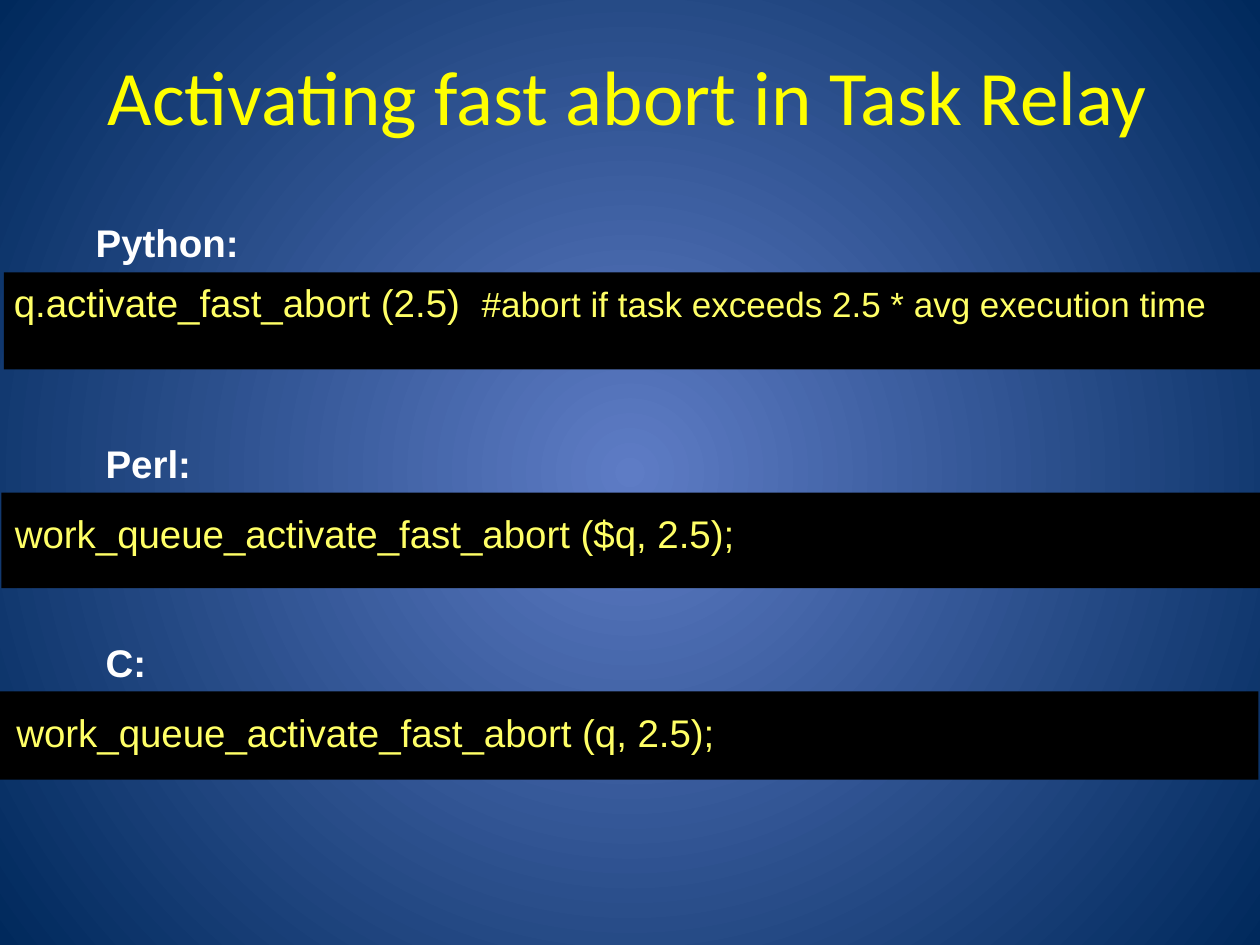
"""Build a slide on activating fast abort from Python, Perl and C."""
from dataclasses import dataclass

from lxml import etree
from pptx import Presentation
from pptx import util as u
from pptx.dml.color import RGBColor
from pptx.enum import shapes, text
from pptx.oxml.ns import qn
from pptx.slide import Slide
from pptx.text.text import TextFrame

COLORS = {
    "center": "5E7CC5",
    "edge": "00295C",
    "title": "FFFF00",
    "label": "FFFFFF",
    "code": "FFFF66",
    "outline": "FFFF00",
    "bar": "000000",
}


@dataclass(frozen=True)
class Box:
    """Position and size in centimetres."""

    left: float
    top: float
    width: float
    height: float

    def lengths(self) -> tuple[u.Cm, ...]:
        """Return the four values as lengths."""
        return tuple(u.Cm(v) for v in (self.left, self.top, self.width, self.height))


@dataclass(frozen=True)
class Run:
    """A stretch of text with one format."""

    words: str
    size: float
    color: str
    font: str = "Arial"
    bold: bool = False
    outlined: bool = False


@dataclass(frozen=True)
class Example:
    """A language label with its code on a dark bar."""

    label: Run
    label_left: float
    bar: Box
    code: tuple[Run, ...]
    code_box: Box


def label(words: str) -> Run:
    """Return a language label."""
    return Run(words, 22, "label", bold=True)


def code(words: str, size: float = 22) -> Run:
    """Return a stretch of code."""
    return Run(words, size, "code", outlined=True)


EXAMPLES = (
    Example(
        label("Python:"), 1.68, Box(0.08, 5.49, 25.4, 1.96),
        (
            code("q.activate_fast_abort (2.5)  "),
            code("#abort if task exceeds 2.5 * avg execution time", 20),
        ),
        Box(0.03, 5.51, 25.2, 1.96),
    ),
    Example(
        label("Perl:"), 1.88, Box(0.03, 9.93, 25.4, 1.93),
        (code("work_queue_activate_fast_abort ($q, 2.5);"),),
        Box(0.05, 10.16, 25.2, 1.96),
    ),
    Example(
        label("C:"), 1.88, Box(-0.03, 13.94, 25.4, 1.78),
        (code("work_queue_activate_fast_abort (q, 2.5);"),),
        Box(0.08, 14.17, 23.85, 3.07),
    ),
)
LABEL_WIDTH, LABEL_HEIGHT = 8.84, 1.19


def rgb(name: str) -> RGBColor:
    """Return a named colour."""
    return RGBColor.from_string(COLORS[name])


def paint_background(slide: Slide) -> None:
    """Fill the background with a circular gradient."""
    fill = slide.background.fill
    fill.gradient()
    for stop, name in zip(fill.gradient_stops, ("center", "edge")):
        stop.color.rgb = rgb(name)
    linear = next(slide.background._cSld.iter(qn("a:lin")))
    circle = etree.Element(qn("a:path"), {"path": "circle"})
    sides = dict.fromkeys("ltrb", "50000")
    etree.SubElement(circle, qn("a:fillToRect"), sides)
    linear.getparent().replace(linear, circle)


def outline_run(properties: etree._Element) -> None:
    """Add a thin outline to the letters of a run."""
    line = etree.Element(qn("a:ln"), {"w": str(u.Pt(0.75))})
    fill = etree.SubElement(line, qn("a:solidFill"))
    etree.SubElement(fill, qn("a:srgbClr"), {"val": COLORS["outline"]})
    properties.insert(0, line)


def add_text(slide: Slide, box: Box, runs: tuple[Run, ...]) -> TextFrame:
    """Add a wrapped text box with one paragraph."""
    frame = slide.shapes.add_textbox(*box.lengths()).text_frame
    frame.word_wrap = True
    paragraph = frame.paragraphs[0]
    for item in runs:
        run = paragraph.add_run()
        run.text = item.words
        run.font.name = item.font
        run.font.size = u.Pt(item.size)
        run.font.bold = item.bold
        run.font.color.rgb = rgb(item.color)
        if item.outlined:
            outline_run(run.font._element)
    return frame


def add_title(slide: Slide) -> None:
    """Add the centred title."""
    title = Run("Activating fast abort in Task Relay", 44, "title", "Calibri")
    frame = add_text(slide, Box(0.91, 0.43, 23.5, 2.97), (title,))
    frame.vertical_anchor = text.MSO_ANCHOR.MIDDLE
    frame.paragraphs[0].alignment = text.PP_ALIGN.CENTER


def add_example(slide: Slide, example: Example) -> None:
    """Add a bar, its code and the label resting on the bar."""
    shape = slide.shapes.add_shape(
        shapes.MSO_SHAPE.RECTANGLE, *example.bar.lengths()
    )
    shape.shadow.inherit = False
    shape.fill.solid()
    shape.fill.fore_color.rgb = rgb("bar")
    shape.line.fill.background()
    add_text(slide, example.code_box, example.code)
    label_top = example.bar.top - LABEL_HEIGHT
    label_box = Box(example.label_left, label_top, LABEL_WIDTH, LABEL_HEIGHT)
    add_text(slide, label_box, (example.label,))


def main() -> None:
    """Build and save the presentation."""
    presentation = Presentation()
    presentation.slide_width = u.Cm(25.4)
    presentation.slide_height = u.Cm(19.05)
    slide = presentation.slides.add_slide(presentation.slide_layouts[6])
    paint_background(slide)
    add_title(slide)
    for example in EXAMPLES:
        add_example(slide, example)
    presentation.save("out.pptx")


if __name__ == "__main__":
    main()
